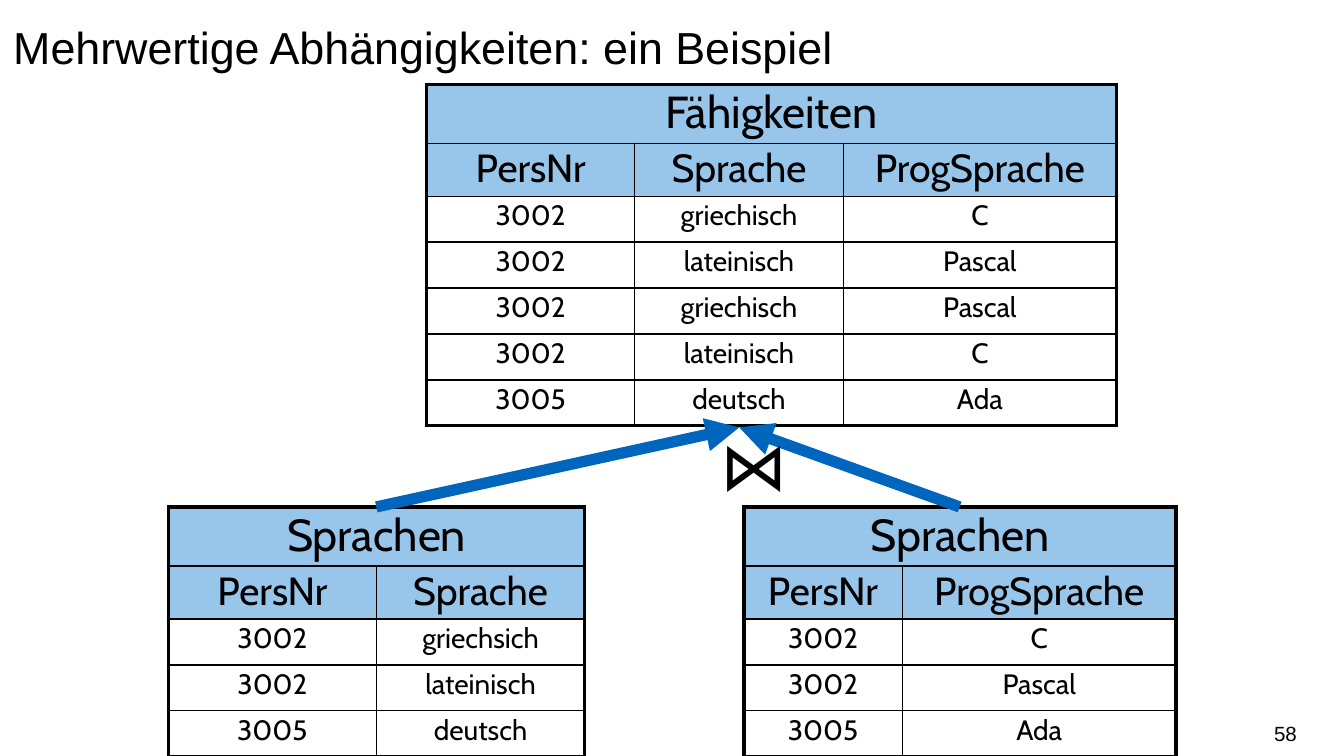
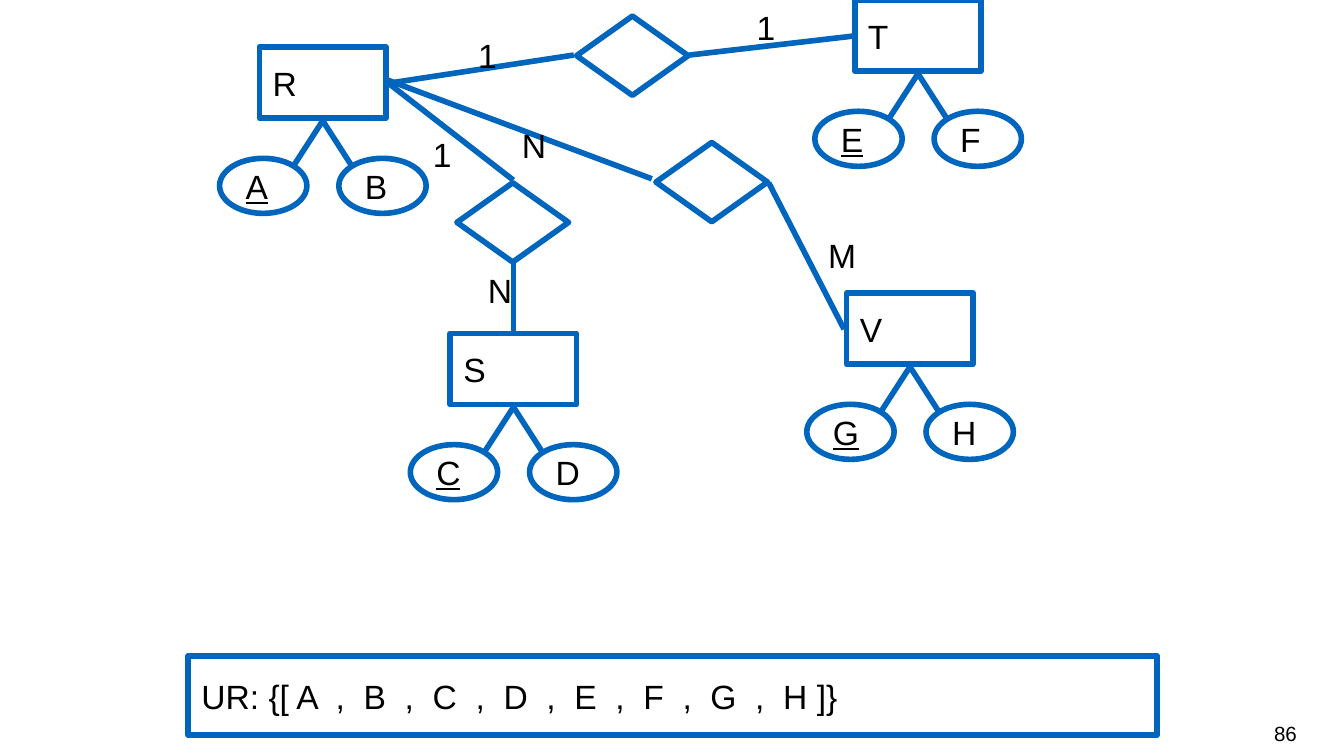
from lxml import etree
from pptx import Presentation
from pptx.dml.color import RGBColor
from pptx.enum.shapes import MSO_CONNECTOR, MSO_SHAPE
from pptx.enum.text import MSO_ANCHOR, PP_ALIGN
from pptx.oxml.ns import qn
from pptx.util import Pt

RECT, ELLIPSE, DIAMOND = MSO_SHAPE.RECTANGLE, MSO_SHAPE.OVAL, MSO_SHAPE.DIAMOND
STRAIGHT = MSO_CONNECTOR.STRAIGHT
TOP, MIDDLE = MSO_ANCHOR.TOP, MSO_ANCHOR.MIDDLE
LEFT, CENTER, RIGHT = PP_ALIGN.LEFT, PP_ALIGN.CENTER, PP_ALIGN.RIGHT

# Shared look
BLUE, HEADER_BLUE, BLACK = "0065BD", "98C6EA", "000000"
BODY_FONT, TABLE_FONT = "Arial", "Cabin"
THICK, THIN = 2.25, 1
NAME_ROW, HEAD_ROW, DATA_ROW = (31.6, 24), (28.4, 21), (24.6, 15)  # height, text size

# ER diagram measures
ENTITY_SIZE = (67.7, 38.2)
ATTRIBUTE_SIZE = (46.8, 29.5)
DIAMOND_SIZE = (59.8, 42.5)


def color(hex_code):
    return RGBColor.from_string(hex_code)


def write(frame, text, size, font=BODY_FONT, align=LEFT, spacing=None, underline=False):
    paragraph = frame.paragraphs[0]
    paragraph.alignment = align
    if spacing:
        paragraph.line_spacing = spacing
    run = paragraph.add_run()
    run.text = text
    run.font.size = Pt(size)
    run.font.name = font
    run.font.color.rgb = color(BLACK)
    if underline:
        run.font.underline = True


def add_text(slide, box, text, size=18, wrap=True, anchor=TOP, side_inset=7.2, **style):
    frame = slide.shapes.add_textbox(*map(Pt, box)).text_frame
    frame.word_wrap = wrap
    frame.vertical_anchor = anchor
    frame.margin_left = frame.margin_right = Pt(side_inset)
    write(frame, text, size, **style)


def add_title(slide, text):
    add_text(slide, (0, 0, 720, 67.5), text, 24, spacing=1.25)


def add_page_number(slide, number):
    add_text(slide, (533.5, 382.3, 161.3, 21.6), str(number), 11,
             anchor=MIDDLE, side_inset=0, align=RIGHT)


def add_outline(slide, preset, box, text="", underline=False):
    outline = slide.shapes.add_shape(preset, *map(Pt, box))
    outline.shadow.inherit = False
    outline.fill.background()
    outline.line.color.rgb = color(BLUE)
    outline.line.width = Pt(3)
    if text:
        frame = outline.text_frame
        frame.word_wrap = False
        frame.vertical_anchor = MIDDLE
        write(frame, text, 18, underline=underline)


def add_line(slide, start, end, width=3, arrow=False):
    connector = slide.shapes.add_connector(STRAIGHT, *map(Pt, (*start, *end)))
    connector.line.color.rgb = color(BLUE)
    connector.line.width = Pt(width)
    properties = connector._element.spPr
    if arrow:
        etree.SubElement(properties.find(qn("a:ln")), qn("a:tailEnd"), type="triangle")
    etree.SubElement(properties, qn("a:effectLst"))


def set_borders(cell, widths):
    properties = cell._tc.get_or_add_tcPr()
    for side, width in zip("LRTB", widths):
        border = etree.SubElement(properties, qn(f"a:ln{side}"), w=str(Pt(width)))
        fill = etree.SubElement(border, qn("a:solidFill"))
        etree.SubElement(fill, qn("a:srgbClr"), val=BLACK)


def add_relation(slide, left, top, column_widths, name, head, records):
    """Table with a merged name row, a row of attribute names and the tuples."""
    rows = [[name] + [""] * (len(head) - 1), head, *records]
    row_kinds = [NAME_ROW, HEAD_ROW] + [DATA_ROW] * len(records)
    height = sum(kind[0] for kind in row_kinds)
    table = slide.shapes.add_table(
        len(rows), len(head), *map(Pt, (left, top, sum(column_widths), height))).table
    table.first_row = table.horz_banding = False
    for column, width in zip(table.columns, column_widths):
        column.width = Pt(width)
    table.cell(0, 0).merge(table.cell(0, len(head) - 1))

    last_row, last_column = len(rows) - 1, len(head) - 1
    for r, (values, (row_height, size)) in enumerate(zip(rows, row_kinds)):
        table.rows[r].height = Pt(row_height)
        for c, value in enumerate(values):
            cell = table.cell(r, c)
            outer = (c == 0, c == last_column or r == 0, r == 0, r == last_row)
            set_borders(cell, [THICK if edge else THIN for edge in outer])
            if r < 2:
                cell.fill.solid()
                cell.fill.fore_color.rgb = color(HEADER_BLUE)
            else:
                cell.fill.background()
            cell.margin_left = cell.margin_right = Pt(5)
            cell.margin_top = cell.margin_bottom = Pt(2.7)
            if value:
                write(cell.text_frame, value, size, TABLE_FONT, CENTER, 0.9)


def add_entity(slide, left, top, name, key, attribute):
    """Entity box with its underlined key and one more attribute below."""
    add_outline(slide, RECT, (left, top, *ENTITY_SIZE), name)
    for text, dx, is_key in ((key, -21.4, True), (attribute, 42.5, False)):
        add_outline(slide, ELLIPSE, (left + dx, top + 59.6, *ATTRIBUTE_SIZE), text, is_key)
    for dx in (18.7, 49):
        add_line(slide, (left + 33.9, top + 39.5), (left + dx, top + 63))


def build_dependency_slide(slide):
    add_title(slide, "Mehrwertige Abhängigkeiten: ein Beispiel")

    # Joined relation and its two projections
    add_relation(slide, 228.5, 45.2, (111.5, 111.8, 146.3), "Fähigkeiten",
                 ["PersNr", "Sprache", "ProgSprache"],
                 [["3002", "griechisch", "C"],
                  ["3002", "lateinisch", "Pascal"],
                  ["3002", "griechisch", "Pascal"],
                  ["3002", "lateinisch", "C"],
                  ["3005", "deutsch", "Ada"]])
    add_relation(slide, 90.2, 271.6, (111.5, 111.5), "Sprachen", ["PersNr", "Sprache"],
                 [["3002", "griechsich"], ["3002", "lateinisch"], ["3005", "deutsch"]])
    add_relation(slide, 398.4, 271.6, (85, 146.7), "Sprachen", ["PersNr", "ProgSprache"],
                 [["3002", "C"], ["3002", "Pascal"], ["3005", "Ada"]])

    # Natural join
    for x in (201.6, 514.1):
        add_line(slide, (x, 271.6), (396, 229), 6, arrow=True)
    add_page_number(slide, 58)
    add_text(slide, (378.7, 223.2, 32.4, 51.1), "⋈", 36, wrap=False)


def build_er_slide(slide):
    # Entities with attributes
    for entity in ((139, 25.2, "R", "A", "B"), (241.2, 178.6, "S", "C", "D"),
                   (457.9, 0, "T", "E", "F"), (453.6, 157, "V", "G", "H")):
        add_entity(slide, *entity)

    # Relationships
    for corner in ((244.8, 97.9), (308.9, 8.6), (351.4, 76.3)):
        add_outline(slide, DIAMOND, (*corner, *DIAMOND_SIZE))
    for start, end in (((208.1, 44.6), (275, 96.5)), ((275, 141.1), (275, 177.1)),
                       ((208.1, 44.6), (307.4, 29.5)), ((369.4, 29.5), (456.5, 19.4)),
                       ((206.6, 42.5), (349.2, 95.8)), ((411.8, 97.9), (452.2, 176.4))):
        add_line(slide, start, end)

    # Cardinalities
    for text, left, top, width in (("1", 228.2, 68.4, 10.8), ("1", 249.1, 15.1, 29.5),
                                   ("N", 275.8, 63.4, 10.8), ("M", 439.9, 122.4, 10.8),
                                   ("1", 398.2, 0, 29.5)):
        add_text(slide, (left, top, width, 28.8), text)
    add_text(slide, (254.2, 141.1, 27.4, 28.8), "N", wrap=False)

    # Universal relation
    add_outline(slide, RECT, (100.8, 351.4, 519.1, 42.5),
                "UR: {[ A  ,  B  ,  C  ,  D  ,  E  ,  F  ,  G  ,  H ]}")
    add_page_number(slide, 86)


def main():
    deck = Presentation()
    deck.slide_width, deck.slide_height = Pt(720), Pt(405)
    for build in (build_dependency_slide, build_er_slide):
        build(deck.slides.add_slide(deck.slide_layouts[6]))
    deck.save("out.pptx")


if __name__ == "__main__":
    main()
